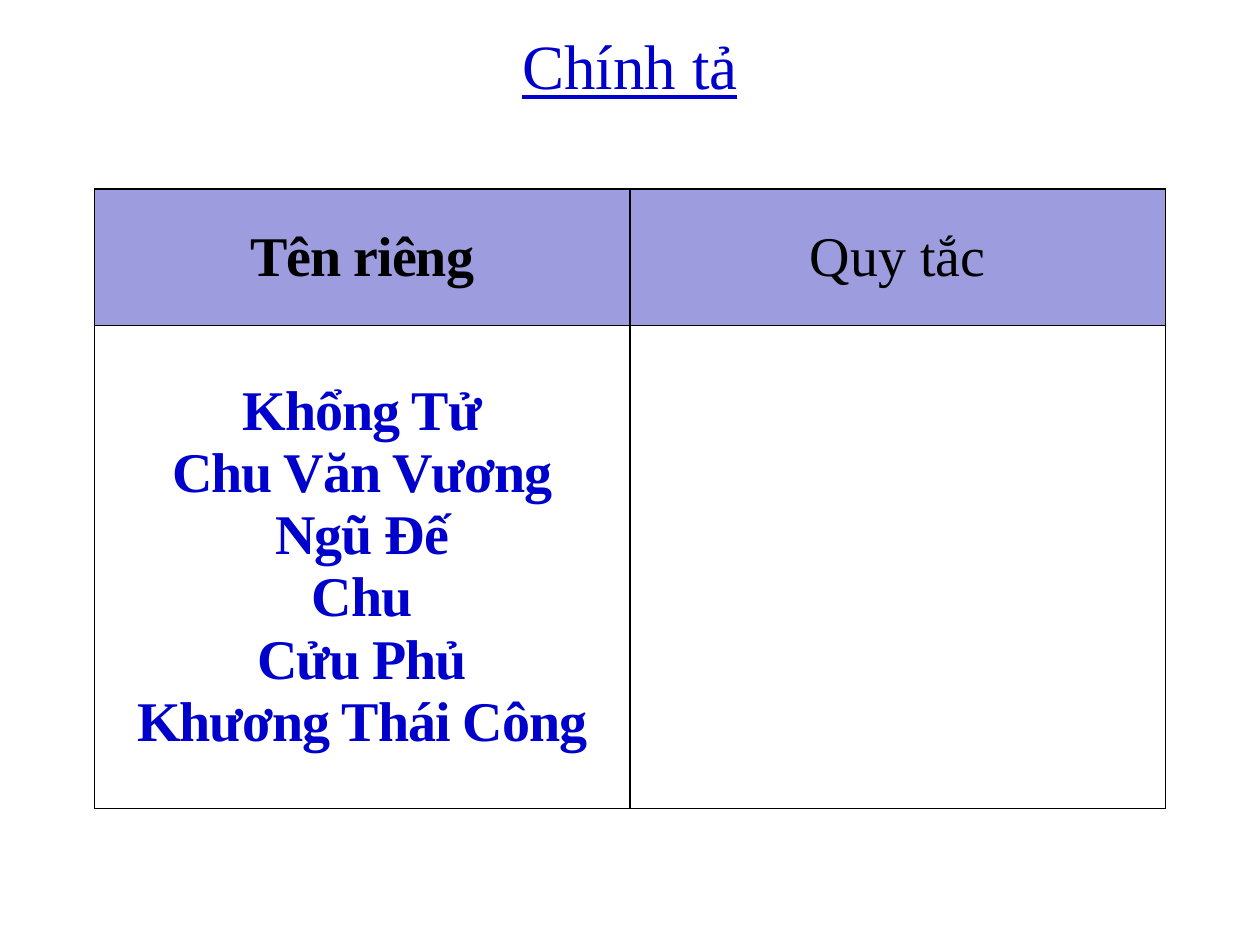
from lxml.etree import SubElement
from pptx import Presentation
from pptx.dml.color import RGBColor
from pptx.enum.text import MSO_ANCHOR, PP_ALIGN
from pptx.oxml.ns import qn
from pptx.util import Pt

FONT = "Times New Roman"
BLUE, BLACK, WHITE, LAVENDER = "0000CC", "000000", "FFFFFF", "9C9CDF"
NAMES = ["Khổng Tử", "Chu Văn Vương", "Ngũ Đế", "Chu", "Cửu Phủ", "Khương Thái Công"]


def color(hex_string):
    return RGBColor.from_string(hex_string)


def add_line(paragraph, text, size, hex_string, bold=False, underline=None):
    """Add one centred run; bold text is set slightly tighter."""
    paragraph.alignment = PP_ALIGN.CENTER
    run = paragraph.add_run()
    run.text = text
    font = run.font
    font.name, font.size = FONT, Pt(size)
    font.bold, font.underline = bold, underline
    font.color.rgb = color(hex_string)
    if bold:
        run._r.get_or_add_rPr().set("spc", "-60")


def add_title(slide, text):
    title = slide.shapes.title
    title.left, title.top, title.width, title.height = Pt(36), Pt(18), Pt(648), Pt(38)
    frame = title.text_frame
    frame.word_wrap = True
    frame.vertical_anchor = MSO_ANCHOR.MIDDLE
    add_line(frame.paragraphs[0], text, 36, BLUE, underline=True)


def set_borders(cell):
    properties = cell._tc.get_or_add_tcPr()
    for position, side in enumerate(("a:lnL", "a:lnR", "a:lnT", "a:lnB")):
        line = SubElement(properties, qn(side), w=str(Pt(1)))
        fill = SubElement(line, qn("a:solidFill"))
        SubElement(fill, qn("a:srgbClr"), val=BLACK)
        properties.insert(position, line)


def format_cell(cell, lines, fill, hex_string, bold):
    cell.fill.solid()
    cell.fill.fore_color.rgb = color(fill)
    cell.vertical_anchor = MSO_ANCHOR.MIDDLE
    set_borders(cell)
    frame = cell.text_frame
    for index, text in enumerate(lines):
        paragraph = frame.add_paragraph() if index else frame.paragraphs[0]
        add_line(paragraph, text, 32, hex_string, bold)


def add_names_table(slide):
    table = slide.shapes.add_table(2, 2, Pt(54), Pt(108), Pt(612), Pt(354)).table
    for column in table.columns:
        column.width = Pt(306)
    for row, height in zip(table.rows, (78, 276)):
        row.height = Pt(height)
    format_cell(table.cell(0, 0), ["Tên riêng"], LAVENDER, BLACK, bold=True)
    format_cell(table.cell(0, 1), ["Quy tắc"], LAVENDER, BLACK, bold=False)
    format_cell(table.cell(1, 0), NAMES, WHITE, BLUE, bold=True)
    format_cell(table.cell(1, 1), [], WHITE, BLUE, bold=False)


def main():
    presentation = Presentation()
    presentation.slide_width, presentation.slide_height = Pt(720), Pt(540)
    slide = presentation.slides.add_slide(presentation.slide_layouts[5])
    add_title(slide, "Chính tả")
    add_names_table(slide)
    presentation.save("out.pptx")


if __name__ == "__main__":
    main()
